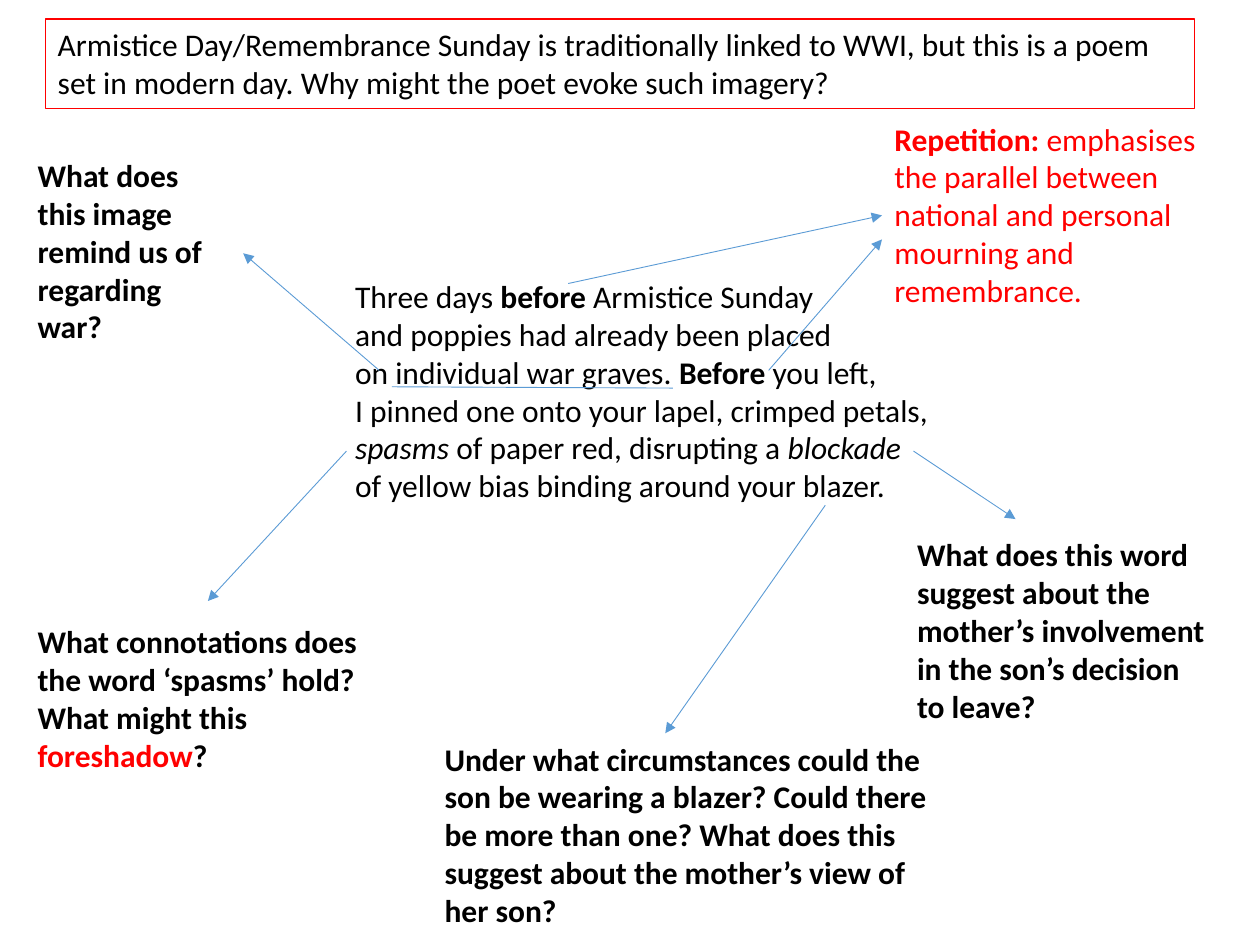
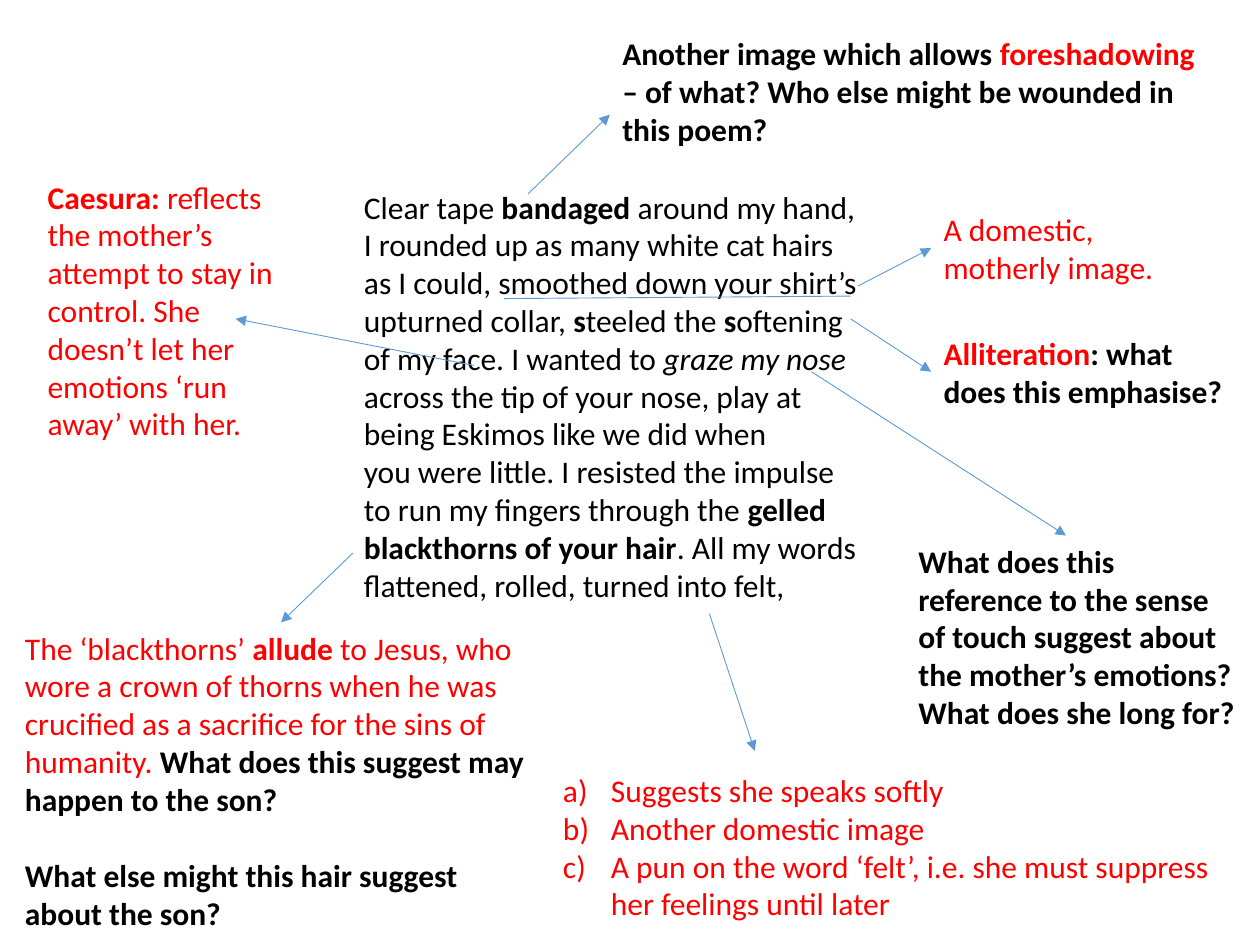
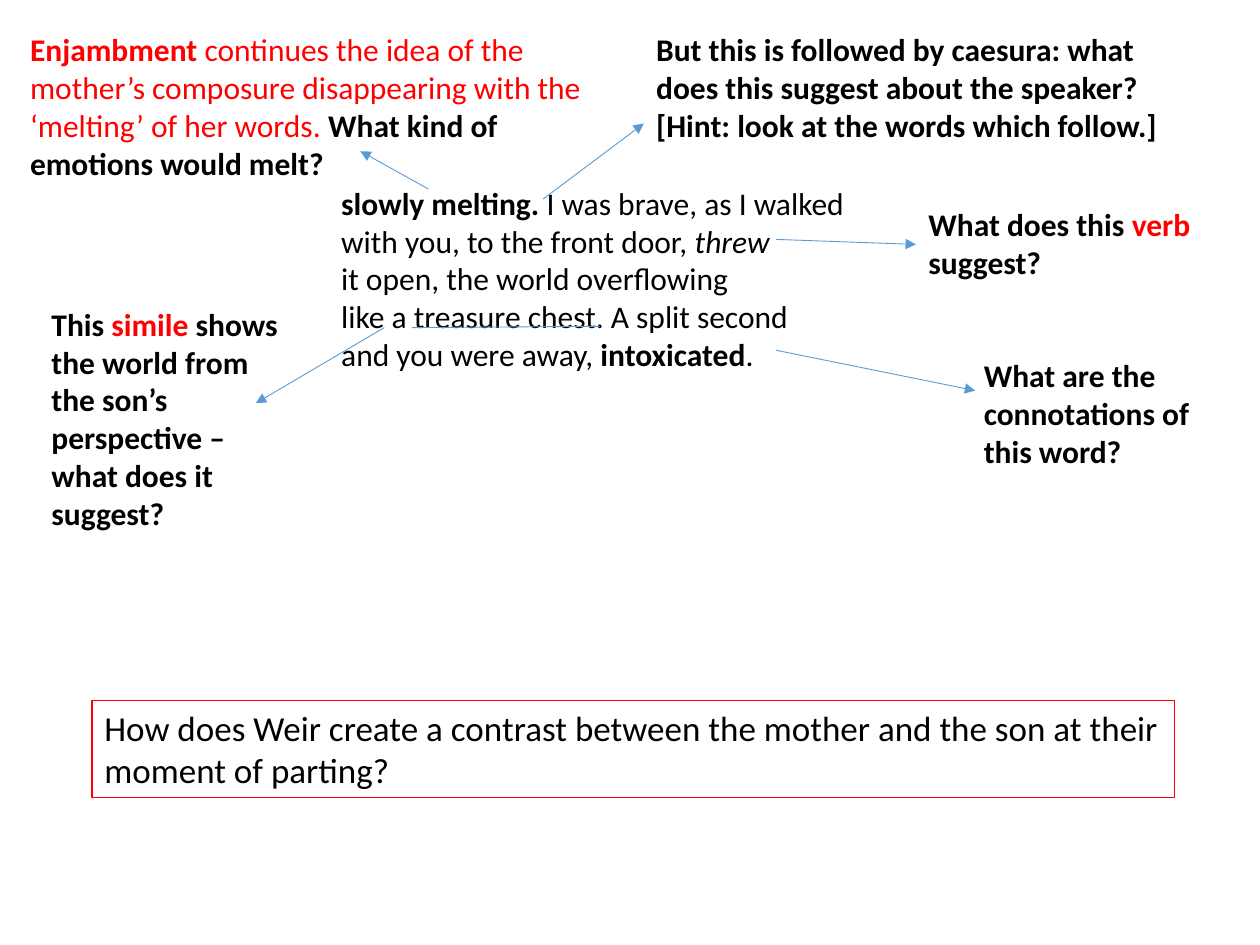
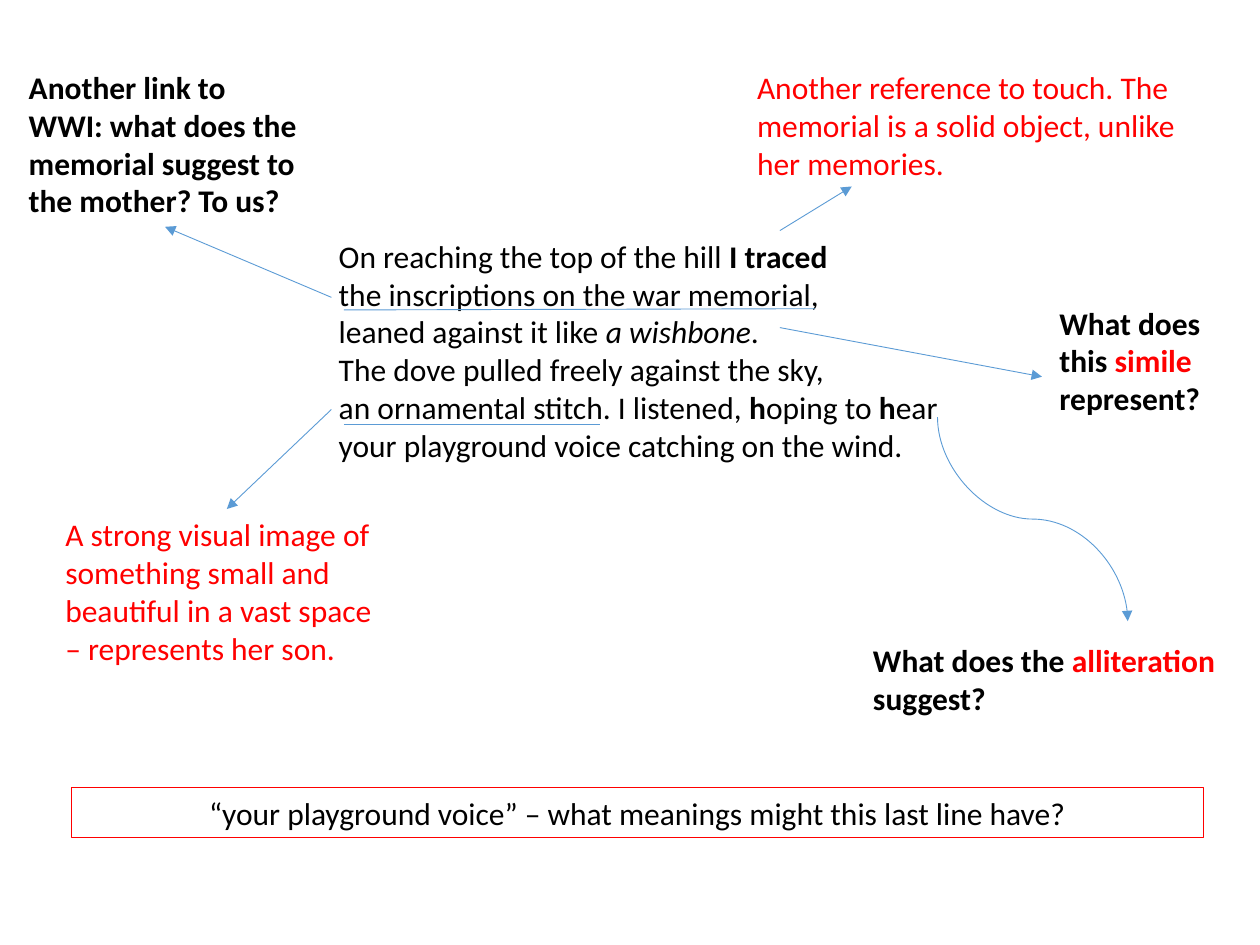
from lxml.etree import SubElement
from pptx import Presentation
from pptx.dml.color import RGBColor
from pptx.enum.shapes import MSO_CONNECTOR, MSO_SHAPE
from pptx.enum.text import MSO_ANCHOR, MSO_AUTO_SIZE, PP_ALIGN
from pptx.oxml.ns import qn
from pptx.util import Inches, Pt

BLACK = RGBColor(0x00, 0x00, 0x00)
RED = RGBColor(0xFF, 0x00, 0x00)
ARROW_BLUE = RGBColor(0x5B, 0x9B, 0xD5)
INK_BLUE = RGBColor(0x43, 0x73, 0x9E)
FONT = "Calibri"
BODY_SIZE = 18
BLANK_LAYOUT = 6


# Text: * switches bold, _ switches italic, ^ switches between black and red
def write_spans(para, text, color, bold):
    other_color = BLACK if color == RED else RED
    for b, bold_part in enumerate(text.split("*")):
        for i, italic_part in enumerate(bold_part.split("_")):
            for c, part in enumerate(italic_part.split("^")):
                if not part:
                    continue
                span = para.add_run()
                span.text = part
                if b % 2:
                    span.font.bold = not bold
                if i % 2:
                    span.font.italic = True
                if c % 2:
                    span.font.color.rgb = other_color


def write_text(frame, lines, color=BLACK, bold=False, size=BODY_SIZE):
    frame.word_wrap = True
    frame.auto_size = MSO_AUTO_SIZE.SHAPE_TO_FIT_TEXT
    frame.vertical_anchor = MSO_ANCHOR.TOP
    for number, line in enumerate(lines):
        para = frame.add_paragraph() if number else frame.paragraphs[0]
        para.font.name = FONT
        para.font.size = Pt(size)
        para.font.bold = bold
        para.font.color.rgb = color
        write_spans(para, line, color, bold)


def add_text(page, box, lines, color=BLACK, bold=False):
    frame = page.shapes.add_textbox(*map(Inches, box)).text_frame
    write_text(frame, lines, color, bold)
    return frame.paragraphs


def set_indent(para, left, first=0):
    properties = para._p.get_or_add_pPr()
    properties.set("marL", str(Inches(left)))
    properties.set("indent", str(Inches(first)))
    return properties


# Regions
def add_poem(page, box, lines):
    for para in add_text(page, box, lines):
        set_indent(para, 0.1)


def add_question(page, box, *lines):
    return add_text(page, box, lines, BLACK, True)


def add_comment(page, box, *lines):
    return add_text(page, box, lines, RED)


def add_lettered_comment(page, box, *lines):
    for para in add_comment(page, box, *lines):
        properties = set_indent(para, 0.38, -0.38)
        bullet = properties.makeelement(qn("a:buAutoNum"), {"type": "alphaLcParenR"})
        properties.insert(0, bullet)


def add_task(page, box, text, size=BODY_SIZE, alignment=PP_ALIGN.LEFT):
    panel = page.shapes.add_shape(MSO_SHAPE.RECTANGLE, *map(Inches, box))
    panel.shadow.inherit = False
    panel.fill.background()
    panel.line.color.rgb = RED
    panel.line.width = Pt(0.75)
    write_text(panel.text_frame, [text], size=size)
    panel.text_frame.paragraphs[0].alignment = alignment


# Lines and arrows
def add_line(page, start, end, arrow=False, kind=MSO_CONNECTOR.STRAIGHT):
    line = page.shapes.add_connector(kind, *map(Inches, (*start, *end)))
    line.line.color.rgb = ARROW_BLUE
    line.line.width = Pt(0.5)
    properties = line._element.spPr
    if arrow:
        SubElement(properties.find(qn("a:ln")), qn("a:tailEnd"), type="triangle")
    SubElement(properties, qn("a:effectLst"))
    return line


def add_arrows(page, *ends):
    for start, end in ends:
        add_line(page, start, end, arrow=True)


def add_curved_arrow(page, start, end):
    """Leave and arrive vertically: a mirrored curve with a quarter turn."""
    middle_x, middle_y = (start[0] + end[0]) / 2, (start[1] + end[1]) / 2
    half_width, half_height = (end[0] - start[0]) / 2, (end[1] - start[1]) / 2
    curve = add_line(page, (middle_x + half_height, middle_y - half_width),
                     (middle_x - half_height, middle_y + half_width),
                     arrow=True, kind=MSO_CONNECTOR.CURVE)
    curve._element.spPr.find(qn("a:xfrm")).set("rot", str(270 * 60000))


def add_pen_circle(page, points):
    builder = page.shapes.build_freeform(*points[0], scale=Inches(1))
    builder.add_line_segments(points[1:], close=False)
    circle = builder.convert_to_shape()
    circle.shadow.inherit = False
    circle.fill.background()
    circle.line.color.rgb = INK_BLUE
    circle.line.width = Pt(1)


# Slides
def build_armistice(page):
    add_poem(page, (2.62, 2.15, 5, 1.92), [
        "Three days *before* Armistice Sunday",
        "and poppies had already been placed",
        "on individual war graves. *Before* you left,",
        "I pinned one onto your lapel, crimped petals,",
        "_spasms_ of paper red, disrupting a _blockade_",
        "of yellow bias binding around your blazer.",
    ])
    add_comment(page, (7, 0.9, 2.72, 1.62),
                "*Repetition:* emphasises the parallel between national and "
                "personal mourning and remembrance.")
    add_question(page, (0.2, 1.19, 1.68, 1.62),
                 "What does this image remind us of regarding war?")
    add_question(page, (0.2, 4.89, 2.74, 1.31),
                 "What connotations does the word ‘spasms’ hold?",
                 "What might this ^foreshadow^?")
    add_question(page, (7.18, 4.2, 2.54, 1.62),
                 "What does this word suggest about the mother’s involvement "
                 "in the son’s decision to leave?")
    add_question(page, (3.43, 5.82, 4.19, 1.62),
                 "Under what circumstances could the son be wearing a blazer? "
                 "Could there be more than one? What does this suggest about "
                 "the mother’s view of her son?")
    add_line(page, (3.11, 3.07), (5.34, 3.08))
    add_arrows(page,
               ((4.51, 2.25), (7, 1.71)),
               ((6.1, 2.94), (7, 1.9)),
               ((3.01, 2.94), (1.93, 2.01)),
               ((2.75, 3.58), (1.65, 4.77)),
               ((7.25, 3.58), (8.06, 4.12)),
               ((6.55, 4.01), (5.28, 5.82)))
    add_task(page, (0.36, 0.15, 9.12, 0.71),
             "Armistice Day/Remembrance Sunday is traditionally linked to WWI, "
             "but this is a poem set in modern day. Why might the poet evoke "
             "such imagery?")


def build_bandaged(page):
    add_poem(page, (2.69, 1.44, 5, 3.43), [
        "Clear tape *bandaged* around my hand,",
        "I rounded up as many white cat hairs",
        "as I could, smoothed down your shirt’s",
        "upturned collar, *s*teeled the *s*oftening",
        "of my face. I wanted to _graze my nose_",
        "across the tip of your nose, play at",
        "being Eskimos like we did when",
        "you were little. I resisted the impulse",
        "to run my fingers through the *gelled*",
        "*blackthorns of your hair*. All my words",
        "flattened, rolled, turned into felt,",
    ])
    add_question(page, (4.84, 0.22, 4.85, 1.01),
                 "Another image which allows ^foreshadowing^ – of what? "
                 "Who else might be wounded in this poem?")
    add_comment(page, (7.39, 1.62, 2.15, 0.71), "A domestic, motherly image.")
    add_question(page, (7.39, 2.6, 2.51, 0.71),
                 "^Alliteration^: what does this emphasise?")
    add_comment(page, (0.28, 1.36, 2.04, 2.22),
                "*Caesura:* reflects the mother’s attempt to stay in control. "
                "She doesn’t let her emotions ‘run away’ with her.")
    add_question(page, (7.19, 4.25, 2.71, 1.62),
                 "What does this reference to the sense of touch suggest about "
                 "the mother’s emotions? What does she long for?")
    thorns = add_comment(page, (0.1, 4.94, 4.27, 2.52),
                         "The ‘blackthorns’ *allude* to Jesus, who wore a crown of "
                         "thorns when he was crucified as a sacrifice for the sins of "
                         "humanity. *^What does this suggest may happen to the son?^*",
                         "*^What else might this hair suggest about the son?^*")
    thorns[1].space_before = Pt(22)
    add_lettered_comment(page, (4.37, 6.07, 5.33, 1.31),
                         "Suggests she speaks softly",
                         "Another domestic image",
                         "A pun on the word ‘felt’, i.e. she must suppress her "
                         "feelings until later")
    add_line(page, (4, 2.37), (6.75, 2.35))
    add_arrows(page,
               ((4.19, 1.54), (4.84, 0.91)),
               ((6.81, 2.27), (7.39, 1.97)),
               ((6.75, 2.53), (7.39, 2.95)),
               ((3.76, 2.9), (1.87, 2.53)),
               ((6.44, 2.95), (8.46, 4.25)),
               ((2.8, 4.39), (2.23, 4.94)),
               ((5.63, 4.87), (5.99, 5.96)))
    add_pen_circle(page, [
        (4.02, 2.81), (3.87, 2.8), (3.75, 2.81), (3.73, 2.85), (3.74, 2.96),
        (3.78, 3.01), (3.83, 3.06), (3.91, 3.08), (4.03, 3.07), (4.05, 3.07),
        (4.1, 2.99), (4.11, 2.97), (4.13, 2.9), (4.12, 2.84), (4.1, 2.84),
        (4.02, 2.82), (3.93, 2.82)])


def build_melting(page):
    add_poem(page, (2.51, 1.41, 5.87, 1.62), [
        "*slowly melting.* I was brave, as I walked",
        "with you, to the front door, _threw_",
        "it open, the world overflowing",
        "like a treasure chest. A split second",
        "and you were away, *intoxicated*.",
    ])
    add_comment(page, (0.14, 0.19, 4.78, 1.31),
                "*Enjambment* continues the idea of the mother’s composure "
                "disappearing with the ‘melting’ of her words. "
                "*^What kind of emotions would melt?^*")
    add_question(page, (5.11, 0.19, 4.33, 1.01),
                 "But this is followed by caesura: what does this suggest about "
                 "the speaker? [Hint: look at the words which follow.]")
    add_question(page, (7.27, 1.58, 2.54, 0.71), "What does this ^verb^ suggest?")
    add_question(page, (0.31, 2.37, 2.08, 1.92),
                 "This ^simile^ shows the world from the son’s perspective – "
                 "what does it suggest?")
    add_question(page, (7.71, 2.78, 2.04, 1.01),
                 "What are the connotations of this word?")
    add_line(page, (3.27, 2.6), (4.76, 2.59))
    add_arrows(page,
               ((3.4, 1.5), (2.86, 1.2)),
               ((4.31, 1.58), (5.11, 0.98)),
               ((6.16, 1.9), (7.27, 1.94)),
               ((3.05, 2.6), (2.03, 3.2)),
               ((6.16, 2.78), (7.74, 3.1)))
    add_pen_circle(page, [
        (4.26, 1.5), (4.26, 1.65), (4.26, 1.78), (4.31, 1.77), (4.34, 1.75),
        (4.35, 1.72), (4.36, 1.67), (4.35, 1.6), (4.33, 1.6), (4.31, 1.58),
        (4.28, 1.57), (4.25, 1.57), (4.19, 1.57), (4.15, 1.62), (4.13, 1.66),
        (4.13, 1.75), (4.17, 1.78), (4.19, 1.8), (4.3, 1.79), (4.34, 1.78),
        (4.37, 1.77)])
    add_task(page, (0.73, 5.56, 8.59, 0.77),
             "How does Weir create a contrast between the mother and the son "
             "at their moment of parting?", size=20)


def build_memorial(page):
    add_poem(page, (2.49, 1.83, 5.56, 1.92), [
        "On reaching the top of the hill *I traced*",
        "the inscriptions on the war memorial,",
        "leaned against it like _a wishbone_.",
        "The dove pulled freely against the sky,",
        "an ornamental stitch. I listened, *h*oping to *h*ear",
        "your playground voice catching on the wind.",
    ])
    add_comment(page, (5.91, 0.49, 3.72, 1.01),
                "Another reference to touch. The memorial is a solid object, "
                "unlike her memories.")
    add_question(page, (0.13, 0.49, 2.37, 1.31),
                 "Another link to WWI: what does the memorial suggest to the "
                 "mother? To us?")
    add_question(page, (8.31, 2.36, 1.5, 1.01),
                 "What does this ^simile^ represent?")
    add_comment(page, (0.42, 4.04, 2.76, 1.31),
                "A strong visual image of something small and beautiful in a "
                "vast space – represents her son.")
    add_question(page, (6.83, 5.04, 2.99, 0.71),
                 "What does the ^alliteration^ suggest?")
    add_line(page, (2.73, 2.46), (6.47, 2.45))
    add_line(page, (2.73, 3.37), (4.76, 3.37))
    add_arrows(page,
               ((6.19, 1.83), (6.76, 1.48)),
               ((2.63, 2.36), (1.31, 1.8)),
               ((6.19, 2.6), (8.27, 2.99)),
               ((2.63, 3.25), (1.8, 4.04)))
    add_curved_arrow(page, (7.44, 3.31), (8.95, 4.93))
    add_task(page, (0.57, 6.25, 8.98, 0.4),
             "“your playground voice” – what meanings might this last line have?",
             alignment=PP_ALIGN.CENTER)


def main():
    deck = Presentation()
    deck.slide_width, deck.slide_height = Inches(10), Inches(7.5)
    for build in (build_armistice, build_bandaged, build_melting, build_memorial):
        build(deck.slides.add_slide(deck.slide_layouts[BLANK_LAYOUT]))
    deck.save("out.pptx")


if __name__ == "__main__":
    main()
